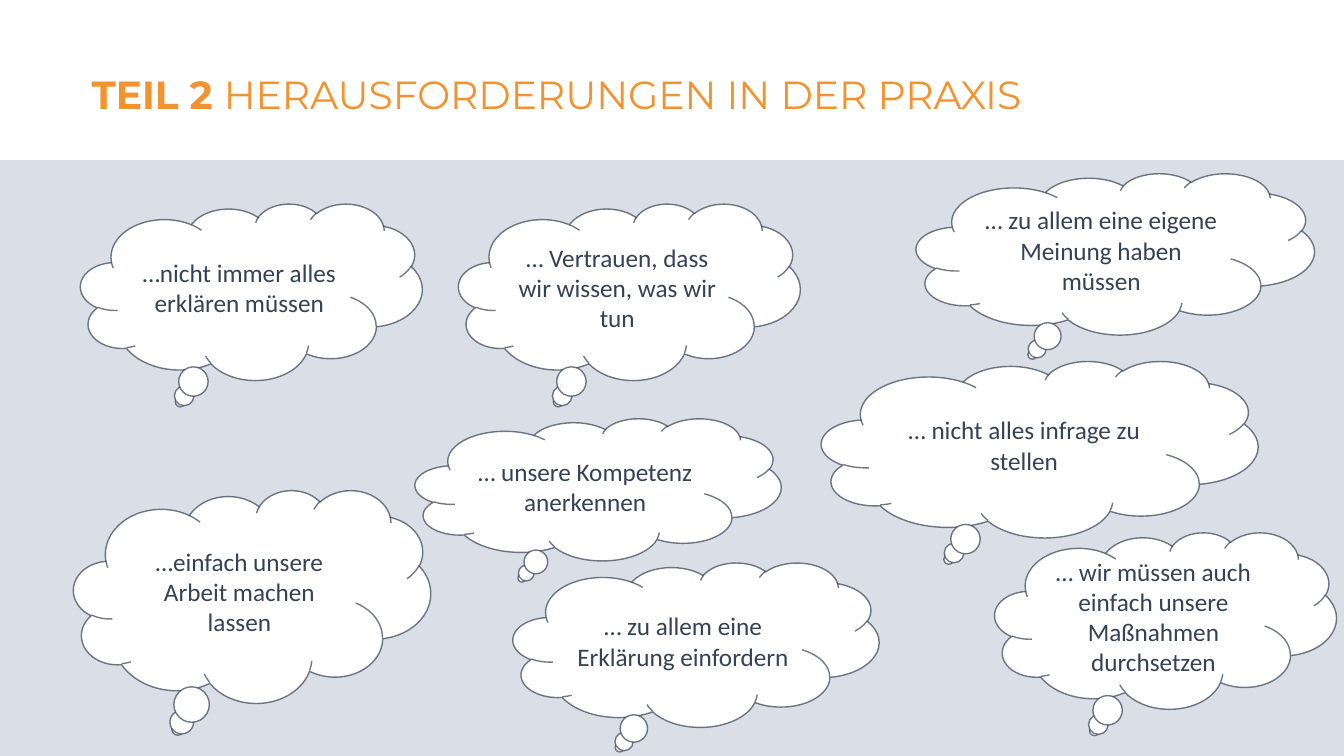
from lxml.etree import SubElement
from pptx import Presentation
from pptx.dml.color import RGBColor
from pptx.enum.shapes import MSO_SHAPE
from pptx.enum.text import MSO_ANCHOR, MSO_AUTO_SIZE, PP_ALIGN
from pptx.oxml.ns import qn
from pptx.util import Pt

WHITE = RGBColor(0xFF, 0xFF, 0xFF)
MIST = RGBColor(0xDA, 0xDE, 0xE6)
ORANGE = RGBColor(0xF2, 0x93, 0x2F)
NAVY = RGBColor(0x35, 0x41, 0x55)

# Left, top, width, height in points, then the thought
CLOUDS = [
    (327.6, 145.4, 244, 126, "… Vertrauen, dass wir wissen, was wir tun"),
    (52.6, 350, 255, 152, "…einfach unsere Arbeit machen lassen"),
    (57.6, 145.4, 244, 126, "…nicht immer alles erklären müssen"),
    (366.5, 401.8, 261.4, 117.4, "… zu allem eine Erklärung einfordern"),
    (654.5, 123.8, 284.4, 115.2, "… zu allem eine eigene Meinung haben müssen"),
    (296.6, 298.8, 261.4, 101.5, "… unsere Kompetenz anerkennen"),
    (586.8, 257.8, 311.8, 126, "… nicht alles infrage zu stellen"),
    (710.6, 380.2, 244, 126, "… wir müssen auch einfach unsere Maßnahmen durchsetzen"),
]


class Deck:
    head_font = "Montserrat"
    body_font = "Calibri"

    def __init__(self, width, height):
        self.prs = Presentation()
        self.prs.slide_width = Pt(width)
        self.prs.slide_height = Pt(height)
        self.slide = None

    def add_slide(self, color):
        self.slide = self.prs.slides.add_slide(self.prs.slide_layouts[5])
        fill = self.slide.background.fill
        fill.solid()
        fill.fore_color.rgb = color

    def style(self, run, font, size, color, bold=False):
        run.font.name = font
        run.font.size = Pt(size)
        run.font.color.rgb = color
        run.font.bold = bold

    def shape(self, kind, box, line):
        shape = self.slide.shapes.add_shape(kind, *map(Pt, box))
        shape.shadow.inherit = False
        shape.fill.solid()
        shape.fill.fore_color.rgb = WHITE
        shape.line.color.rgb = line
        shape.line.width = Pt(1)
        return shape

    def band(self, *box):
        band = self.shape(MSO_SHAPE.RECTANGLE, box, WHITE)
        # Send behind the title
        self.slide.shapes.element.insert(2, band.element)

    def title(self, box, parts):
        title = self.slide.shapes.title
        title.left, title.top, title.width, title.height = map(Pt, box)
        frame = title.text_frame
        frame.word_wrap = True
        frame.auto_size = MSO_AUTO_SIZE.NONE
        frame.vertical_anchor = MSO_ANCHOR.TOP
        para = frame.paragraphs[0]
        para.alignment = PP_ALIGN.LEFT
        para.line_spacing = 0.9
        for text, bold in parts:
            run = para.add_run()
            run.text = text
            self.style(run, self.head_font, 28, ORANGE, bold)

    def cloud(self, box, text):
        cloud = self.shape(MSO_SHAPE.CLOUD_CALLOUT, box, NAVY)
        # Outline at 70 % opacity
        color = cloud.line.fill._xPr.find(".//" + qn("a:srgbClr"))
        SubElement(color, qn("a:alpha"), val="70000")
        frame = cloud.text_frame
        frame.text = text
        frame.word_wrap = True
        frame.vertical_anchor = MSO_ANCHOR.MIDDLE
        para = frame.paragraphs[0]
        para.alignment = PP_ALIGN.CENTER
        self.style(para.runs[0], self.body_font, 18, NAVY)

    def save(self):
        self.prs.save("out.pptx")


def main():
    deck = Deck(960, 540)
    deck.add_slide(MIST)

    # Header
    deck.band(0, 0, 960, 114)
    deck.title((58.3, 50.4, 727, 36.7),
               [("TEIL 2 ", True), ("HERAUSFORDERUNGEN IN DER PRAXIS", False)])

    # Thought clouds
    for *box, text in CLOUDS:
        deck.cloud(box, text)

    deck.save()


if __name__ == "__main__":
    main()
